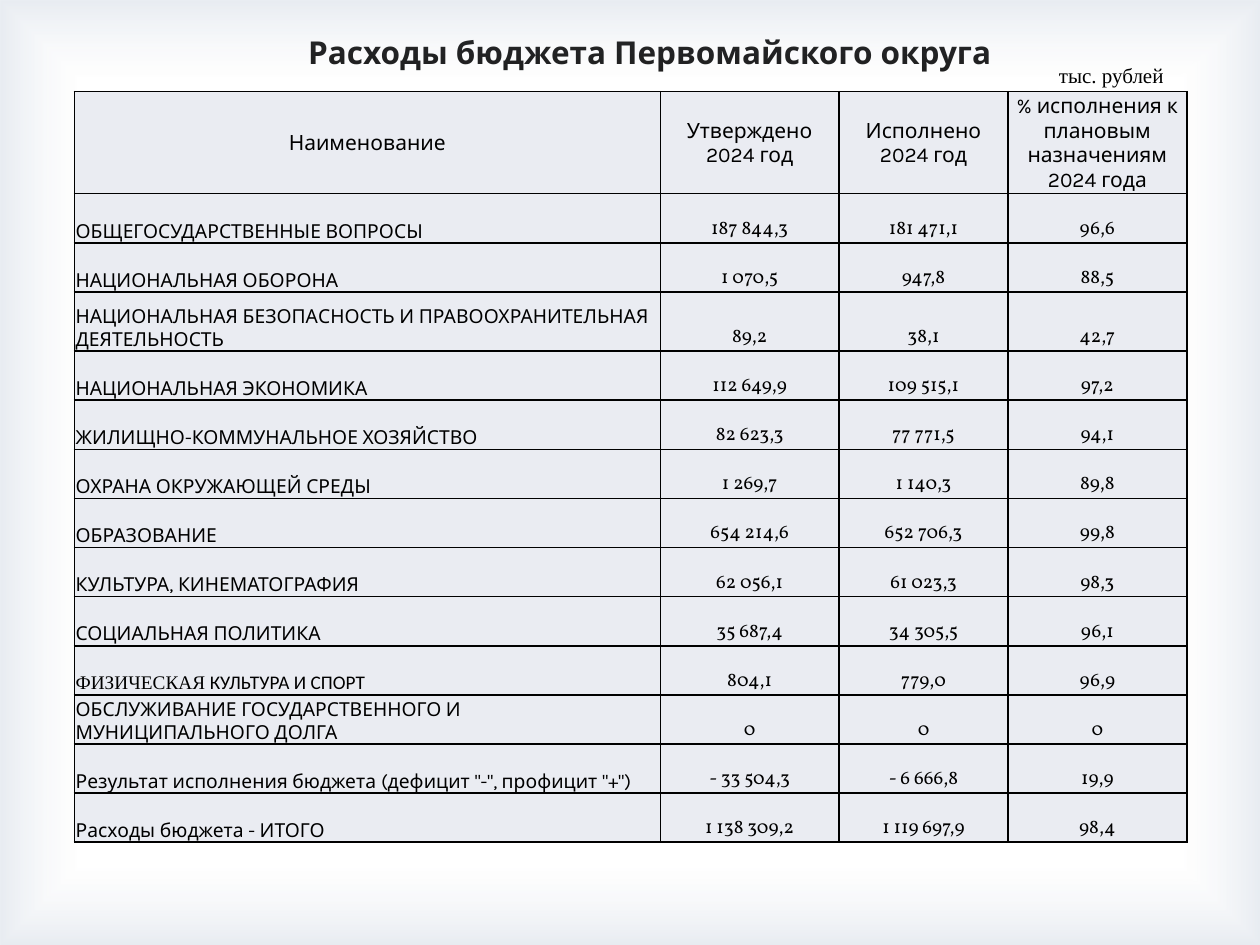
from lxml import etree
from pptx import Presentation
from pptx.dml.color import RGBColor
from pptx.enum.shapes import MSO_SHAPE
from pptx.enum.text import MSO_ANCHOR, PP_ALIGN
from pptx.oxml import parse_xml
from pptx.oxml.ns import nsdecls, qn
from pptx.util import Inches, Pt

RECTANGLE = MSO_SHAPE.RECTANGLE
LEFT, CENTER = PP_ALIGN.LEFT, PP_ALIGN.CENTER
TOP, MIDDLE, BOTTOM = MSO_ANCHOR.TOP, MSO_ANCHOR.MIDDLE, MSO_ANCHOR.BOTTOM

WIDTH, HEIGHT = 10, 7.5
BLACK, CELL_FILL = "000000", "EAECF2"
LABEL_FONT, NUMBER_FONT, SERIF_FONT = "Karla", "Vollkorn", "Times New Roman"

COLUMN_WIDTHS = [4.65, 1.42, 1.34, 1.42]
HEADER_HEIGHT, ROW_HEIGHT, TALL_ROW_HEIGHT = 0.81, 0.39, 0.47
TALL_ROW = 3

HEADINGS = ["Наименование", "Утверждено 2024 год", "Исполнено 2024 год",
            "% исполнения к плановым назначениям 2024 года"]
# A label is either plain text or a list of (text, font) runs
EXPENSES = [
    ("ОБЩЕГОСУДАРСТВЕННЫЕ ВОПРОСЫ", "187 844,3", "181 471,1", "96,6"),
    ("НАЦИОНАЛЬНАЯ ОБОРОНА", "1 070,5", "947,8", "88,5"),
    ("НАЦИОНАЛЬНАЯ БЕЗОПАСНОСТЬ И ПРАВООХРАНИТЕЛЬНАЯ ДЕЯТЕЛЬНОСТЬ",
     "89,2", "38,1", "42,7"),
    ("НАЦИОНАЛЬНАЯ ЭКОНОМИКА", "112 649,9", "109 515,1", "97,2"),
    ("ЖИЛИЩНО-КОММУНАЛЬНОЕ ХОЗЯЙСТВО", "82 623,3", "77 771,5", "94,1"),
    ("ОХРАНА ОКРУЖАЮЩЕЙ СРЕДЫ", "1 269,7", "1 140,3", "89,8"),
    ("ОБРАЗОВАНИЕ", "654 214,6", "652 706,3", "99,8"),
    ("КУЛЬТУРА, КИНЕМАТОГРАФИЯ", "62 056,1", "61 023,3", "98,3"),
    ("СОЦИАЛЬНАЯ ПОЛИТИКА", "35 687,4", "34 305,5", "96,1"),
    ([("ФИЗИЧЕСКАЯ", SERIF_FONT), (" КУЛЬТУРА И СПОРТ", "Calibri")],
     "804,1", "779,0", "96,9"),
    ("ОБСЛУЖИВАНИЕ ГОСУДАРСТВЕННОГО И МУНИЦИПАЛЬНОГО ДОЛГА", "0", "0", "0"),
    ('Результат исполнения бюджета (дефицит "-", профицит "+")',
     "- 33 504,3", "- 6 666,8", "19,9"),
    ("Расходы бюджета - ИТОГО", "1 138 309,2", "1 119 697,9", "98,4"),
]


def color(hex_value):
    return RGBColor.from_string(hex_value)


def share(box):
    """Turn shares of the slide's size into lengths."""
    left, top, width, height = box
    return (Inches(left * WIDTH), Inches(top * HEIGHT),
            Inches(width * WIDTH), Inches(height * HEIGHT))


def write(frame, runs, size, align=CENTER, bold=False):
    frame.word_wrap = True
    paragraph = frame.paragraphs[0]
    paragraph.alignment = align
    for text, font_name in runs:
        run = paragraph.add_run()
        run.text = text
        run.font.name = font_name
        run.font.size = Pt(size)
        run.font.bold = bold
        run.font.color.rgb = color(BLACK)


def add_vignette(slide, box):
    vignette = slide.shapes.add_shape(RECTANGLE, *share(box))
    vignette.shadow.inherit = False
    vignette.line.fill.background()
    vignette.fill.background()
    stops = "".join(
        f'<a:gs pos="{position}000"><a:srgbClr val="{tint}">'
        f'<a:alpha val="{alpha}000"/></a:srgbClr></a:gs>'
        for position, tint, alpha in [(83, "FFFFFF", 11), (100, "9BADC4", 23)])
    gradient = parse_xml(
        f'<a:gradFill {nsdecls("a")} rotWithShape="1"><a:gsLst>{stops}</a:gsLst>'
        '<a:path path="rect"><a:fillToRect l="50000" t="50000" r="50000" b="50000"/>'
        '</a:path></a:gradFill>')
    properties = vignette._element.spPr
    properties.replace(properties.find(qn("a:noFill")), gradient)


def add_title(slide, box):
    title = slide.shapes.title
    title.left, title.top, title.width, title.height = share(box)
    title.text_frame.vertical_anchor = TOP
    write(title.text_frame, [("Расходы бюджета Первомайского округа ", LABEL_FONT)],
          18, bold=True)


def add_unit_note(slide, box):
    note = slide.shapes.add_textbox(*share(box))
    write(note.text_frame, [("тыс. рублей", SERIF_FONT)], 12)


def add_borders(cell):
    properties = cell._tc.get_or_add_tcPr()
    for index, side in enumerate(("lnL", "lnR", "lnT", "lnB")):
        border = etree.Element(qn(f"a:{side}"), w=str(Pt(1)))
        fill = etree.SubElement(border, qn("a:solidFill"))
        etree.SubElement(fill, qn("a:srgbClr"), val=BLACK)
        properties.insert(index, border)


def fill_cell(cell, runs, size, align, anchor):
    cell.margin_left = cell.margin_right = cell.margin_top = Inches(0.01)
    cell.margin_bottom = 0
    cell.vertical_anchor = anchor
    cell.fill.solid()
    cell.fill.fore_color.rgb = color(CELL_FILL)
    add_borders(cell)
    write(cell.text_frame, runs, size, align)


def add_expense_table(slide, box):
    table = slide.shapes.add_table(
        len(EXPENSES) + 1, len(HEADINGS), *share(box)).table
    table.first_row = table.horz_banding = False
    for column, width in zip(table.columns, COLUMN_WIDTHS):
        column.width = Inches(width)
    for row in table.rows:
        row.height = Inches(ROW_HEIGHT)
    table.rows[0].height = Inches(HEADER_HEIGHT)
    table.rows[TALL_ROW].height = Inches(TALL_ROW_HEIGHT)

    for column, heading in enumerate(HEADINGS):
        fill_cell(table.cell(0, column), [(heading, LABEL_FONT)], 12, CENTER, MIDDLE)
    for row, (label, *amounts) in enumerate(EXPENSES, start=1):
        label_runs = [(label, LABEL_FONT)] if isinstance(label, str) else label
        fill_cell(table.cell(row, 0), label_runs, 11, LEFT, BOTTOM)
        for column, amount in enumerate(amounts, start=1):
            fill_cell(table.cell(row, column), [(amount, NUMBER_FONT)],
                      11, CENTER, BOTTOM)


def main():
    deck = Presentation()
    deck.slide_width, deck.slide_height = Inches(WIDTH), Inches(HEIGHT)
    slide = deck.slides.add_slide(deck.slide_layouts[5])
    add_vignette(slide, (0, 0, 1, 1))
    add_expense_table(slide, (0.059, 0.097, 0.883, 0.8))
    add_title(slide, (0.157, 0.028, 0.724, 0.053))
    add_unit_note(slide, (0.815, 0.06, 0.134, 0.04))
    deck.save("out.pptx")


if __name__ == "__main__":
    main()
